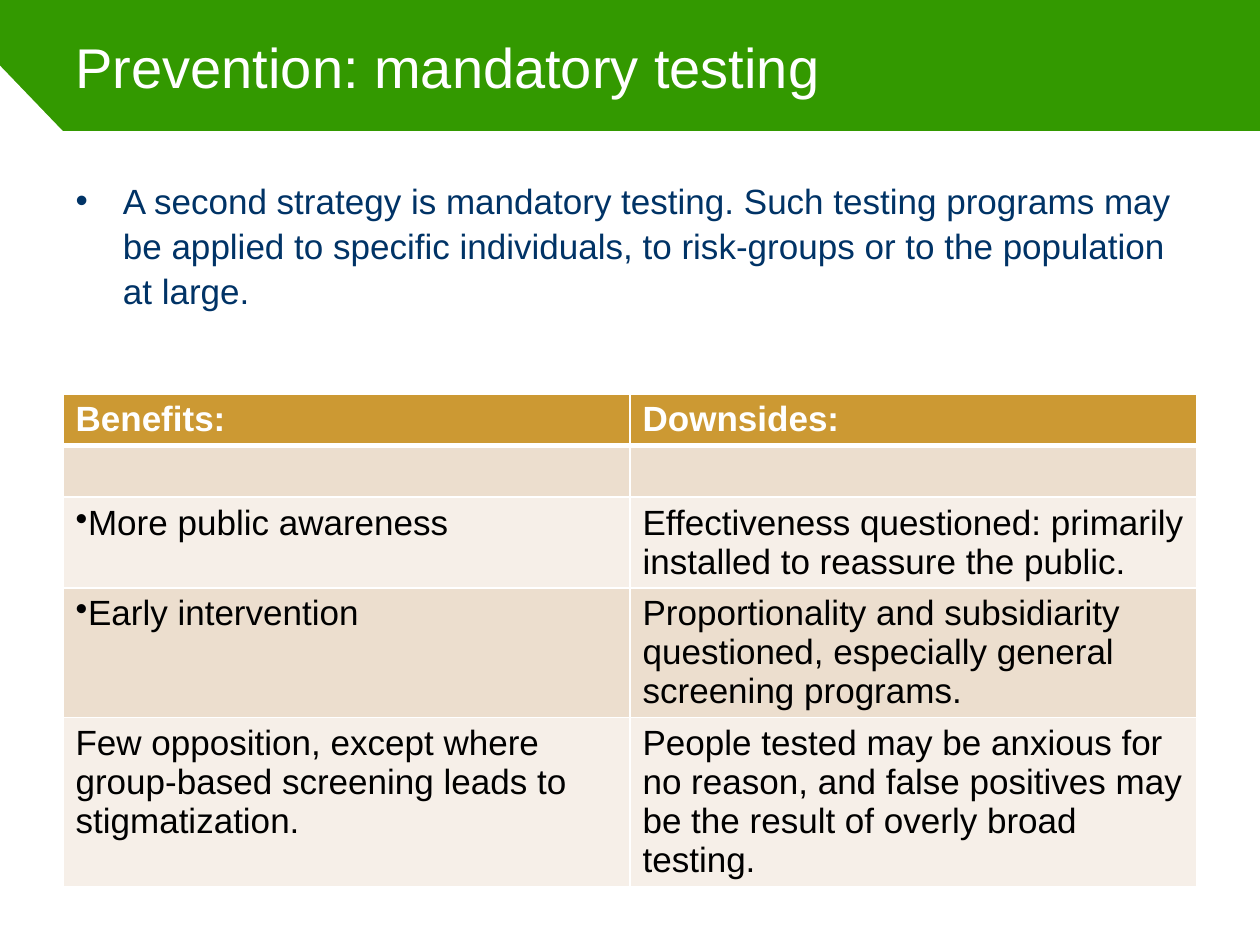
from dataclasses import dataclass

import pptx
import pptx.dml.color
import pptx.enum.text
import pptx.oxml.ns
import pptx.util
from lxml import etree

Pt = pptx.util.Pt
qn = pptx.oxml.ns.qn


@dataclass(frozen=True)
class Theme:
    font: str = "Arial"
    title_size: int = 32
    text_size: int = 20
    green: str = "339900"
    white: str = "FFFFFF"
    navy: str = "003366"
    black: str = "000000"
    gold: str = "CC9933"
    bands: tuple = ("ECDECE", "F6EFE8")


THEME = Theme()
MARGIN, CONTENT_WIDTH, BANNER_HEIGHT = 36, 648, 75

STRATEGY = ("A second strategy is mandatory testing. Such testing programs may be applied to "
            "specific individuals, to risk-groups or to the population at large.")

# Benefit, downside, whether the benefit is bulleted, text lines in the row
ARGUMENTS = [
    ("", "", False, 1),
    ("More public awareness",
     "Effectiveness questioned: primarily installed to reassure the public.", True, 2),
    ("Early intervention",
     "Proportionality and subsidiarity questioned, especially general screening programs.",
     True, 3),
    ("Few opposition, except where group-based screening leads to stigmatization.",
     "People tested may be anxious for no reason, and false positives may be the result "
     "of overly broad testing.", False, 4),
]


def rgb(color):
    return pptx.dml.color.RGBColor.from_string(color)


def fill_solid(fill, color):
    fill.solid()
    fill.fore_color.rgb = rgb(color)


def format_runs(paragraph, size, color, bold=False):
    for run in paragraph.runs:
        run.font.name = THEME.font
        run.font.size = Pt(size)
        run.font.bold = bold
        run.font.color.rgb = rgb(color)


def add_bullet(paragraph, indent=0):
    properties = paragraph._p.get_or_add_pPr()
    properties.set("marL", str(Pt(indent)))
    properties.set("indent", str(-Pt(indent)))
    etree.SubElement(properties, qn("a:buChar")).set("char", "•")


def place(placeholder, left, top, width, height):
    placeholder.left, placeholder.top = Pt(left), Pt(top)
    placeholder.width, placeholder.height = Pt(width), Pt(height)
    placeholder.text_frame.auto_size = pptx.enum.text.MSO_AUTO_SIZE.NONE


def add_page_panel(slide):
    """White page area whose cut corner leaves the green banner."""
    outline = slide.shapes.build_freeform(Pt(MARGIN), Pt(BANNER_HEIGHT))
    corners = [(0, 37.5), (0, 540), (720, 540), (720, BANNER_HEIGHT)]
    outline.add_line_segments([(Pt(x), Pt(y)) for x, y in corners], close=True)
    panel = outline.convert_to_shape()
    panel.shadow.inherit = False
    fill_solid(panel.fill, THEME.white)
    panel.line.fill.background()
    # Send behind the placeholders
    slide.shapes._spTree.insert(2, panel._element)


def set_title(slide, text):
    title = slide.shapes.title
    place(title, MARGIN, 0, CONTENT_WIDTH, BANNER_HEIGHT)
    title.text_frame.vertical_anchor = pptx.enum.text.MSO_ANCHOR.MIDDLE
    title.text_frame.text = text
    heading = title.text_frame.paragraphs[0]
    heading.alignment = pptx.enum.text.PP_ALIGN.LEFT
    format_runs(heading, THEME.title_size, THEME.white)


def set_body(slide, text):
    body = slide.placeholders[1]
    place(body, MARGIN, 97.2, CONTENT_WIDTH, 368.6)
    body.text_frame.text = text
    strategy = body.text_frame.paragraphs[0]
    add_bullet(strategy, indent=27)
    strategy.space_before = Pt(0)
    strategy.space_after = Pt(6)
    strategy.line_spacing = 1.07
    format_runs(strategy, THEME.text_size, THEME.navy)


def set_borders(cell, bottom_width):
    properties = cell._tc.get_or_add_tcPr()
    widths = {"a:lnL": 1, "a:lnR": 1, "a:lnT": 1, "a:lnB": bottom_width}
    for position, (side, width) in enumerate(widths.items()):
        border = etree.Element(qn(side), w=str(Pt(width)))
        paint = etree.SubElement(border, qn("a:solidFill"))
        etree.SubElement(paint, qn("a:srgbClr")).set("val", THEME.white)
        properties.insert(position, border)


def set_cell(cell, text, fill, color, bold=False, bulleted=False, bottom_width=1):
    fill_solid(cell.fill, fill)
    set_borders(cell, bottom_width)
    cell.text_frame.text = text
    paragraph = cell.text_frame.paragraphs[0]
    if bulleted:
        add_bullet(paragraph)
    format_runs(paragraph, THEME.text_size, color, bold)


def add_arguments_table(slide):
    line_height, cell_padding = 22.3, 7.2
    line_counts = [1] + [lines for *_, lines in ARGUMENTS]
    heights = [count * line_height + cell_padding for count in line_counts]
    table = slide.shapes.add_table(len(heights), 2, Pt(MARGIN), Pt(225),
                                   Pt(CONTENT_WIDTH), Pt(sum(heights))).table
    table.first_row = table.horz_banding = False
    for row, height in zip(table.rows, heights):
        row.height = Pt(height)

    # Header row
    for column, heading in enumerate(("Benefits:", "Downsides:")):
        set_cell(table.cell(0, column), heading, THEME.gold, THEME.white,
                 bold=True, bottom_width=3)

    # Banded argument rows
    for index, (benefit, downside, bulleted, _) in enumerate(ARGUMENTS):
        band = THEME.bands[index % 2]
        set_cell(table.cell(index + 1, 0), benefit, band, THEME.black, bulleted=bulleted)
        set_cell(table.cell(index + 1, 1), downside, band, THEME.black)


def main():
    presentation = pptx.Presentation()
    presentation.slide_width, presentation.slide_height = Pt(720), Pt(540)
    slide = presentation.slides.add_slide(presentation.slide_layouts[1])
    fill_solid(slide.background.fill, THEME.green)

    add_page_panel(slide)
    set_title(slide, "Prevention: mandatory testing")
    set_body(slide, STRATEGY)
    add_arguments_table(slide)
    presentation.save("out.pptx")


if __name__ == "__main__":
    main()
